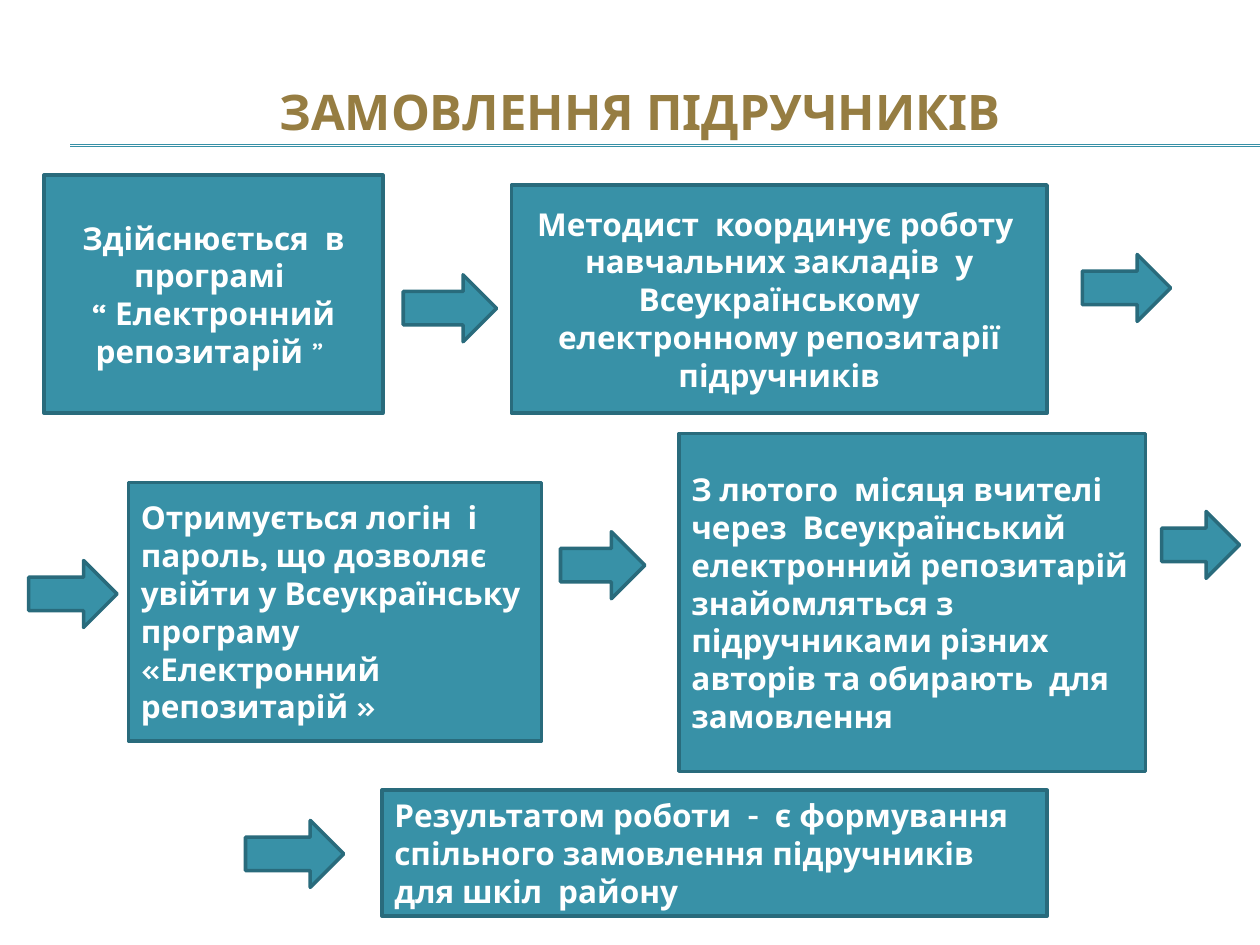
from typing import NamedTuple

from lxml.etree import SubElement
from pptx import Presentation
from pptx.dml.color import RGBColor
from pptx.enum.shapes import MSO_CONNECTOR as Link, MSO_SHAPE as Kind
from pptx.enum.text import MSO_ANCHOR as Anchor, PP_ALIGN as Align
from pptx.oxml.ns import qn
from pptx.util import Cm, Pt

COLORS = {"fill": "3891A7", "edge": "296B7C", "title": "967D42", "text": "FFFFFF"}
FONT = "Karla"
ARROW_HIGH = 1.35


class Box(NamedTuple):
    left: float
    top: float
    width: float
    height: float
    lines: tuple[str, ...]
    align: Align = Align.LEFT


class Arrow(NamedTuple):
    left: float
    top: float
    width: float


BOXES = [
    Box(0.89, 3.53, 6.83, 4.8,
        ("Здійснюється  в програмі ", "“ Електронний репозитарій "), Align.CENTER),
    Box(10.31, 3.73, 10.8, 4.6,
        ("Методист  координує роботу  навчальних закладів  у Всеукраїнському "
         "електронному репозитарії підручників",), Align.CENTER),
    Box(2.59, 9.73, 8.33, 5.21,
        ("Отримується логін  і пароль, що дозволяє  увійти у Всеукраїнську "
         "програму «Електронний репозитарій »",)),
    Box(13.69, 8.74, 9.4, 6.81,
        ("З лютого  місяця вчителі  через  Всеукраїнський електронний "
         "репозитарій знайомляться з  підручниками різних авторів та "
         "обирають  для замовлення",)),
    Box(7.7, 15.93, 13.41, 2.54,
        ("Результатом роботи  -  є формування  спільного замовлення "
         "підручників для шкіл  району",)),
]
ARROWS = [
    Arrow(8.13, 5.54, 1.88), Arrow(21.82, 5.13, 1.78), Arrow(0.58, 11.3, 1.78),
    Arrow(11.3, 10.72, 1.7), Arrow(23.42, 10.31, 1.57), Arrow(4.95, 16.54, 1.98),
]


def color(name: str) -> RGBColor:
    return RGBColor.from_string(COLORS[name])


def write(frame, lines: tuple[str, ...], size: int, tint: str, align: Align) -> None:
    frame.word_wrap = True
    frame.vertical_anchor = Anchor.MIDDLE
    for i, line in enumerate(lines):
        para = frame.add_paragraph() if i else frame.paragraphs[0]
        para.alignment = align
        font = para.font
        font.name, font.size, font.bold = FONT, Pt(size), True
        font.color.rgb = color(tint)
        para.add_run().text = line


def add_shape(slide, kind: Kind, left: float, top: float, width: float, height: float):
    shape = slide.shapes.add_shape(kind, Cm(left), Cm(top), Cm(width), Cm(height))
    shape.shadow.inherit = False
    shape.fill.solid()
    shape.fill.fore_color.rgb = color("fill")
    shape.line.color.rgb = color("edge")
    shape.line.width = Pt(2)
    return shape


def add_box(slide, box: Box):
    shape = add_shape(slide, Kind.RECTANGLE, *box[:4])
    write(shape.text_frame, box.lines, 18, "text", box.align)
    return shape


def add_rule(slide, top: float) -> None:
    rule = slide.shapes.add_connector(Link.STRAIGHT, Cm(1.42), Cm(top), Cm(25.4), Cm(top))
    rule.line.color.rgb = color("fill")
    rule.line.width = Pt(0.75)
    SubElement(rule.element.spPr, qn("a:effectLst"))


def main() -> None:
    deck = Presentation()
    deck.slide_width, deck.slide_height = Cm(25.4), Cm(19.05)
    slide = deck.slides.add_slide(deck.slide_layouts[6])
    for top in (2.92, 2.95):
        add_rule(slide, top)
    title = slide.shapes.add_textbox(Cm(0.84), Cm(0.74), Cm(24.13), Cm(3))
    write(title.text_frame, ("ЗАМОВЛЕННЯ ПІДРУЧНИКІВ",), 28, "title", Align.CENTER)
    shapes = [add_box(slide, box) for box in BOXES]
    quote = shapes[0].text_frame.paragraphs[-1].add_run()
    quote.text = "” "
    quote.font.bold = False
    for arrow in ARROWS:
        add_shape(slide, Kind.RIGHT_ARROW, *arrow, ARROW_HIGH)
    deck.save("out.pptx")


if __name__ == "__main__":
    main()
